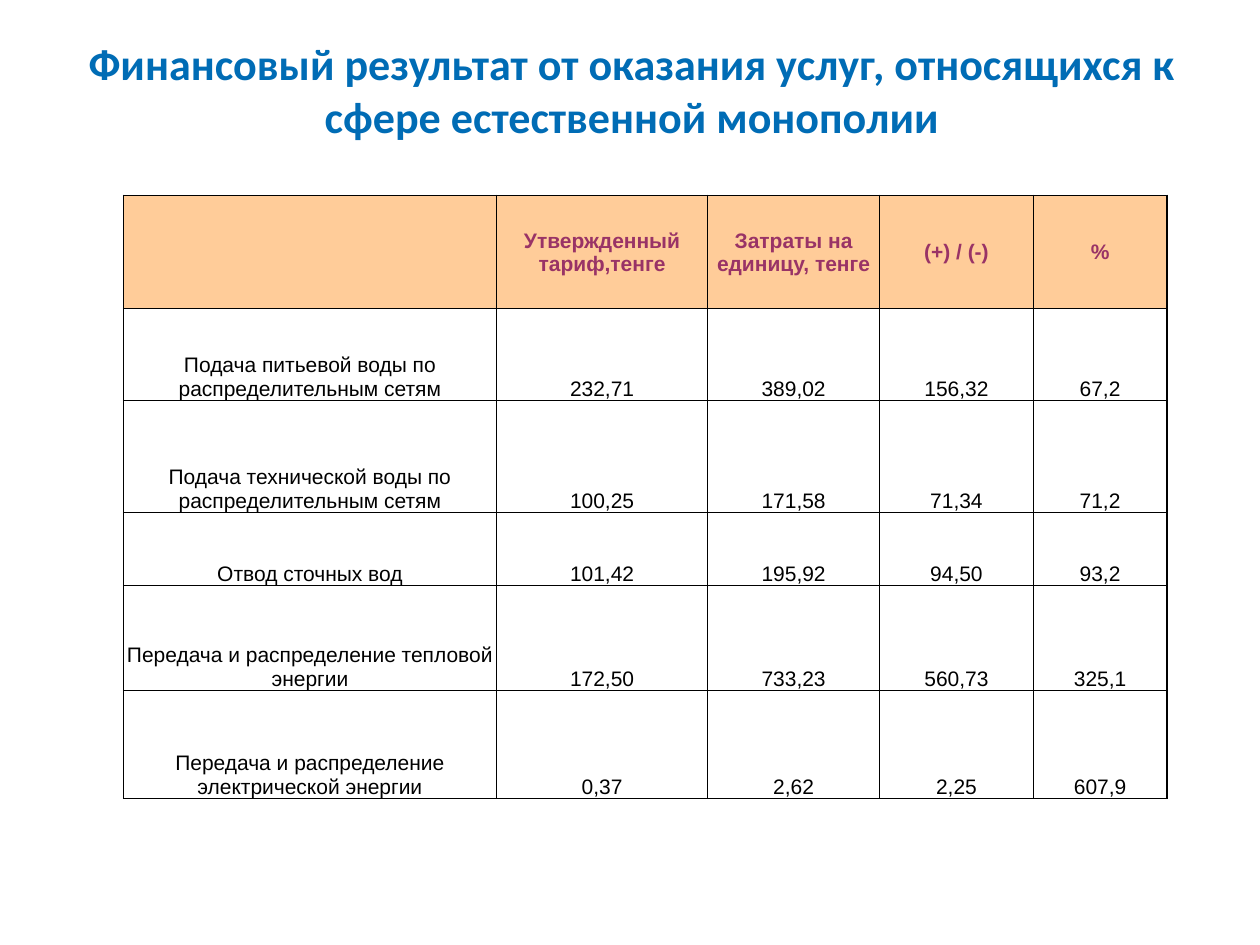
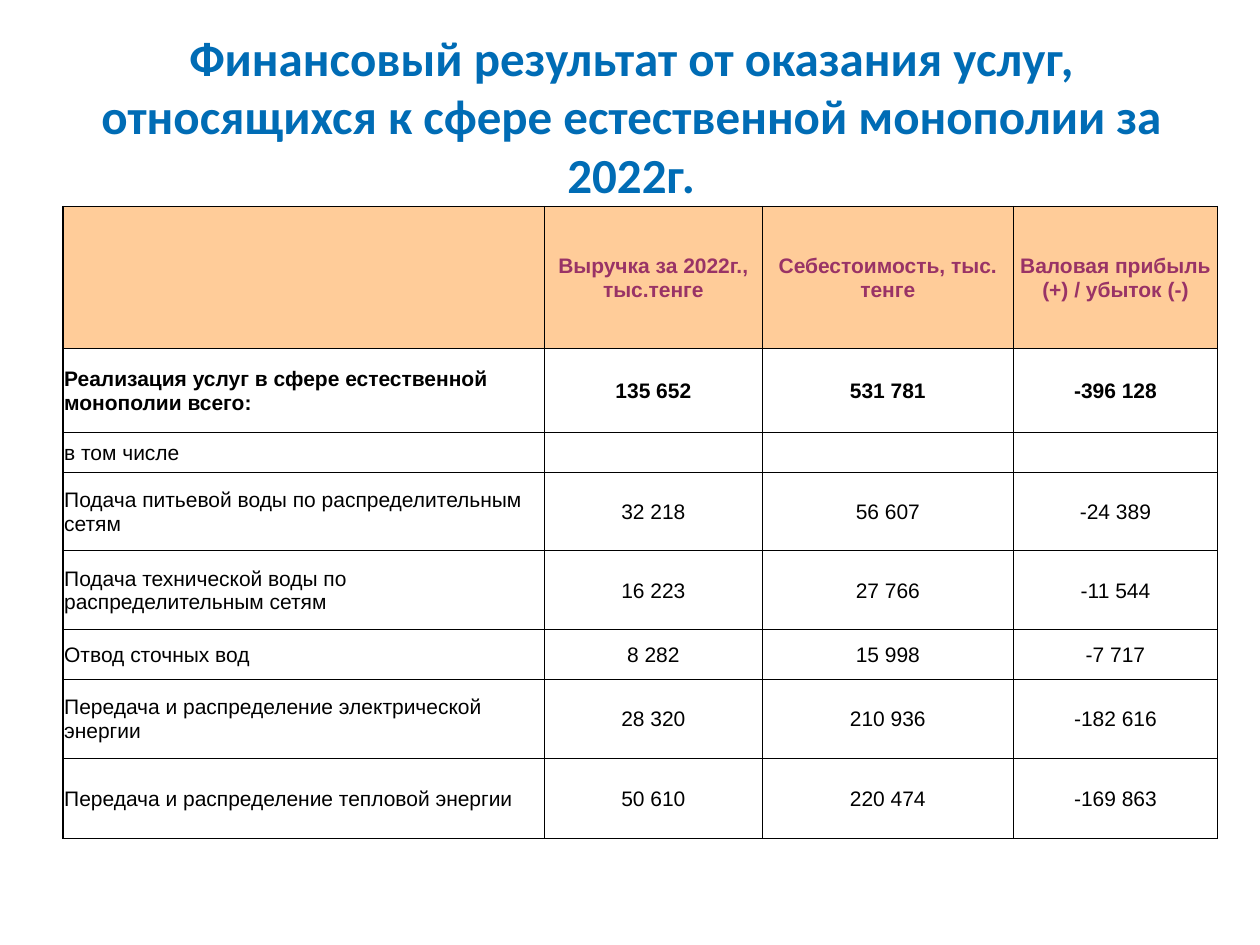
"""Builds two slides on the financial results of natural monopoly services."""
from lxml import etree
from pptx import Presentation
from pptx.dml.color import RGBColor
from pptx.enum.text import MSO_ANCHOR, PP_ALIGN
from pptx.oxml.ns import qn
from pptx.util import Pt

TOP, MIDDLE, BOTTOM = MSO_ANCHOR.TOP, MSO_ANCHOR.MIDDLE, MSO_ANCHOR.BOTTOM
LEFT, CENTER = PP_ALIGN.LEFT, PP_ALIGN.CENTER

COLORS = {"title": "006CB5", "header_fill": "FFCC99", "header_text": "993366",
          "body": "000000", "border": "000000"}
TITLE_FONT, TABLE_FONT, TABLE_SIZE = "Calibri", "Arial", 12
THIN, THICK = 0.5, 1

SLIDES = [
    {
        "title": "Финансовый результат от оказания услуг, относящихся к сфере естественной монополии",
        "title_size": 25.2,
        "title_box": (38.2, 37.4, 645.8, 74.2),
        "title_bottom_inset": 50,
        "origin": (70.6, 111.6),
        "columns": [213.1, 120.8, 98.1, 88, 76.2],
        "heights": [64.7, 52.6, 64, 41.8, 60, 61.8],
        "rows": [
            ("", "Утвержденный тариф,тенге", "Затраты на единицу, тенге", "(+) / (-)", "%"),
            ("Подача питьевой воды по распределительным сетям", "232,71", "389,02", "156,32", "67,2"),
            ("Подача технической воды по распределительным сетям", "100,25", "171,58", "71,34", "71,2"),
            ("Отвод сточных вод", "101,42", "195,92", "94,50", "93,2"),
            ("Передача и распределение тепловой энергии", "172,50", "733,23", "560,73", "325,1"),
            ("Передача и распределение электрической энергии", "0,37", "2,62", "2,25", "607,9"),
        ],
        "bold_rows": {0},
        "label_align": CENTER,
        "body_anchor": BOTTOM,
        "header_rule": THIN,
        "bottom_rule": THIN,
    },
    {
        "title": "Финансовый результат от оказания услуг, относящихся к сфере естественной монополии за 2022г.",
        "title_size": 28,
        "title_box": (36.7, 20.9, 648, 90),
        "title_bottom_inset": 3.6,
        "origin": (36, 118),
        "columns": [275.1, 124.6, 143.4, 116.8],
        "heights": [81.2, 48.1, 22.9, 44.6, 45, 28.3, 45.2, 46.1],
        "rows": [
            ("", "Выручка за 2022г., тыс.тенге", "Себестоимость, тыс. тенге",
             "Валовая прибыль (+) / убыток (-)"),
            ("Реализация услуг в сфере естественной монополии всего:", "135 652", "531 781", "-396 128"),
            ("в том числе", "", "", ""),
            ("Подача питьевой воды по распределительным сетям", "32 218", "56 607", "-24 389"),
            ("Подача технической воды по распределительным сетям", "16 223", "27 766", "-11 544"),
            ("Отвод сточных вод", "8 282", "15 998", "-7 717"),
            ("Передача и распределение электрической энергии", "28 320", "210 936", "-182 616"),
            ("Передача и распределение тепловой энергии", "50 610", "220 474", "-169 863"),
        ],
        "bold_rows": {0, 1},
        "label_align": LEFT,
        "body_anchor": MIDDLE,
        "header_rule": THICK,
        "bottom_rule": THICK,
    },
]


def write(paragraph, text, font_name, size, color, bold, align):
    paragraph.alignment = align
    if not text:
        return
    run = paragraph.add_run()
    run.text = text
    run.font.name = font_name
    run.font.size = Pt(size)
    run.font.bold = bold
    run.font.color.rgb = RGBColor.from_string(COLORS[color])


def add_title(slide, content):
    frame = slide.shapes.add_textbox(*map(Pt, content["title_box"])).text_frame
    frame.word_wrap = True
    frame.vertical_anchor = MIDDLE
    frame.margin_bottom = Pt(content["title_bottom_inset"])
    write(frame.paragraphs[0], content["title"], TITLE_FONT, content["title_size"],
          "title", True, CENTER)


def set_borders(cell, widths):
    properties = cell._tc.get_or_add_tcPr()
    for side, width in widths.items():
        line = etree.SubElement(properties, qn(f"a:ln{side}"), w=str(Pt(width)))
        fill = etree.SubElement(line, qn("a:solidFill"))
        etree.SubElement(fill, qn("a:srgbClr"), val=COLORS["border"])


def border_widths(content, row, column):
    last_row, last_column = len(content["rows"]) - 1, len(content["columns"]) - 1
    bottom = THIN
    if row == 0:
        bottom = content["header_rule"]
    elif row == last_row:
        bottom = THICK if column == 0 else content["bottom_rule"]
    return {
        "L": THICK if column == 0 else THIN,
        "R": THICK if column == last_column else THIN,
        "T": THICK if row == 0 else content["header_rule"] if row == 1 else THIN,
        "B": bottom,
    }


def fill_cell(cell, content, row, column):
    is_header = row == 0
    cell.margin_left = cell.margin_right = cell.margin_top = Pt(0.7)
    cell.margin_bottom = Pt(0)
    cell.vertical_anchor = MIDDLE if is_header else content["body_anchor"]
    set_borders(cell, border_widths(content, row, column))
    if is_header:
        cell.fill.solid()
        cell.fill.fore_color.rgb = RGBColor.from_string(COLORS["header_fill"])
    else:
        cell.fill.background()
    write(cell.text_frame.paragraphs[0], content["rows"][row][column], TABLE_FONT, TABLE_SIZE,
          "header_text" if is_header else "body", row in content["bold_rows"],
          content["label_align"] if column == 0 else CENTER)


def add_results(slide, content):
    columns, heights = content["columns"], content["heights"]
    results = slide.shapes.add_table(
        len(heights), len(columns), *map(Pt, content["origin"]),
        Pt(sum(columns)), Pt(sum(heights))).table
    results.first_row = results.horz_banding = False
    for column, width in zip(results.columns, columns):
        column.width = Pt(width)
    for row, height in zip(results.rows, heights):
        row.height = Pt(height)
    for row in range(len(heights)):
        for column in range(len(columns)):
            fill_cell(results.cell(row, column), content, row, column)


def main():
    deck = Presentation()
    deck.slide_width, deck.slide_height = Pt(720), Pt(540)
    for content in SLIDES:
        slide = deck.slides.add_slide(deck.slide_layouts[6])
        add_title(slide, content)
        add_results(slide, content)
    deck.save("out.pptx")


if __name__ == "__main__":
    main()
